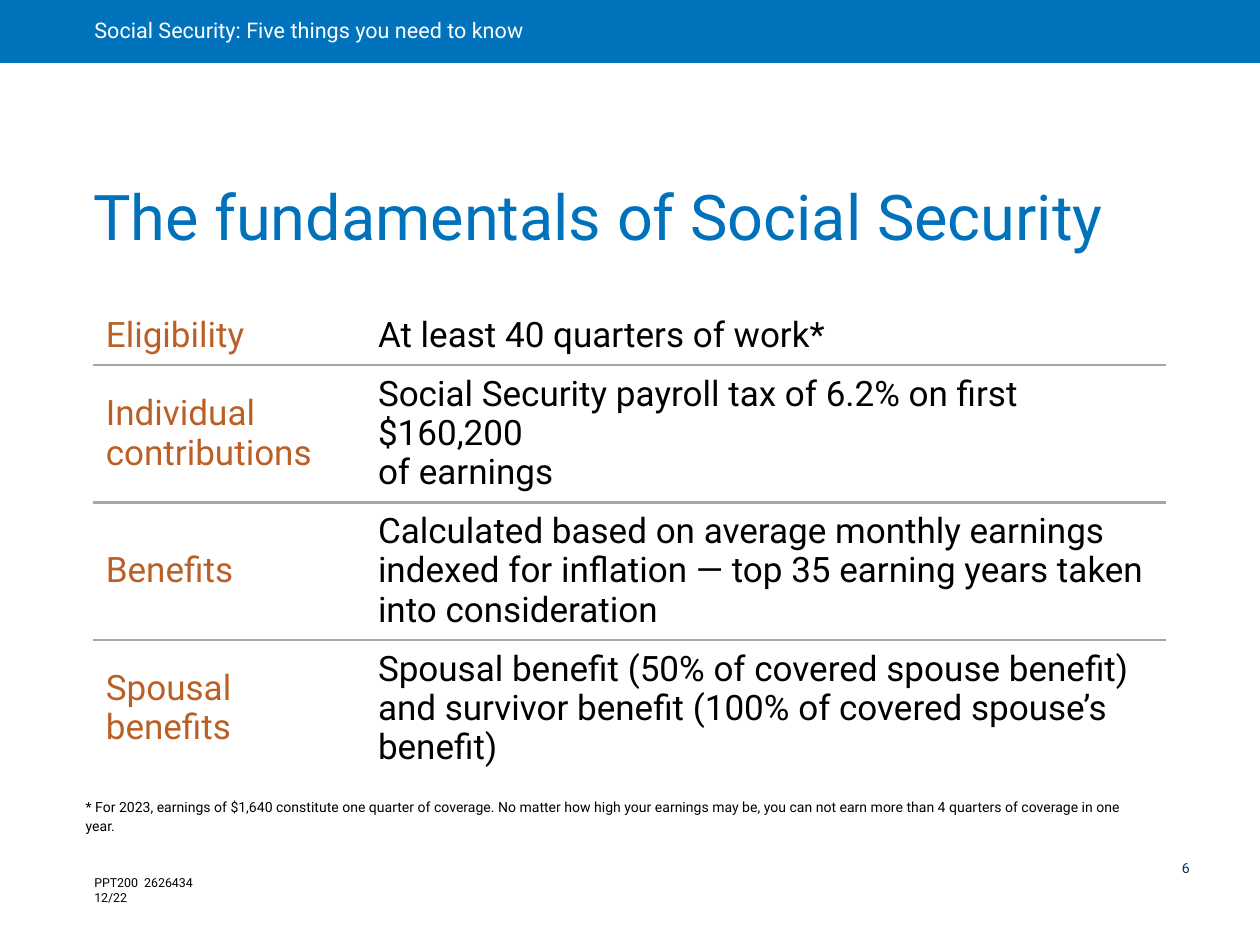
from lxml.etree import SubElement
from pptx import Presentation
from pptx.dml.color import RGBColor
from pptx.enum.shapes import MSO_SHAPE as Shape
from pptx.enum.text import MSO_ANCHOR as Anchor, PP_ALIGN as Align
from pptx.oxml.ns import qn
from pptx.util import Inches, Pt

BLUE, RUST, GRAY = "0072BC", "BA6027", "A6A6A6"


def tint(color, code):
    color.rgb = RGBColor.from_string(code)


def write(frame, text, size, code="000000", space=None):
    """Fill a text frame; a vertical tab in the text is a line break."""
    frame.word_wrap = True
    para = frame.paragraphs[0]
    para.text = text
    para.alignment = Align.LEFT
    para.line_spacing = space
    for run in para.runs:
        run.font.size = Pt(size)
        run.font.name = "Roboto"
        tint(run.font.color, code)


prs = Presentation()
prs.slide_width, prs.slide_height = Inches(10), Inches(7.5)
slide = prs.slides.add_slide(prs.slide_layouts[6])
shapes = slide.shapes

# Header band
band = shapes.add_shape(Shape.RECTANGLE, 0, 0, Inches(10), Inches(0.5))
band.shadow.inherit = False
band.fill.solid()
tint(band.fill.fore_color, "0073BC")
band.line.fill.background()
frame = band.text_frame
frame.margin_left, frame.margin_right = Inches(0.75), Inches(0.22)
frame.margin_top = frame.margin_bottom = 0
frame.vertical_anchor = Anchor.MIDDLE
write(frame, "Social Security: Five things you need to know", 12.3, "FFFFFF", 0.9)

# Title, footnote, document code and page number:
# place, insets (left, top, right, bottom), anchor, text, size, color, spacing
wide = (0.11, 0.06, 0.11, 0.06)
note = ("* For 2023, earnings of $1,640 constitute one quarter of coverage. "
        "No matter how high your earnings may be, you can not earn more than "
        "4 quarters of coverage in one year.")
boxes = [
    ((0.63, 1.78, 8.62, 0.3), wide, Anchor.BOTTOM,
     "The fundamentals of Social Security", 36, BLUE, 0.9),
    ((0.57, 6.46, 8.62, 0.22), wide, Anchor.BOTTOM, note, 8, "000000", 1.1),
    ((0.65, 6.9, 1.16, 0.34), (0.1, 0.05, 0.1, 0.05), Anchor.TOP,
     "PPT200  2626434 12/22", 7.1, "000000", None),
    ((9.25, 6.8, 0.5, 0.21), (0.13, 0.04, 0.04, 0.04), Anchor.TOP,
     "6", 8, "003463", 0.9),
]
for place, inset, anchor, text, size, code, space in boxes:
    frame = shapes.add_textbox(*map(Inches, place)).text_frame
    (frame.margin_left, frame.margin_top,
     frame.margin_right, frame.margin_bottom) = map(Inches, inset)
    frame.vertical_anchor = anchor
    write(frame, text, size, code, space)

# Table of fundamentals
rows = [
    ("Eligibility", "At least 40 quarters of work*"),
    ("Individual contributions",
     "Social Security payroll tax of 6.2% on first $160,200\vof earnings"),
    ("Benefits",
     "Calculated based on average monthly earnings indexed for inflation "
     "— top 35 earning years taken into consideration"),
    ("Spousal\vbenefits",
     "Spousal benefit (50% of covered spouse benefit) and survivor benefit "
     "(100% of covered spouse’s benefit)"),
]
last = len(rows) - 1
holder = shapes.add_table(len(rows), 2, Inches(0.74), Inches(2.44),
                          Inches(8.52), Inches(3.09))
table = holder.table
table.first_row = table.horz_banding = False
for col, width in zip(table.columns, (2.16, 6.35)):
    col.width = Inches(width)
for row, height in zip(table.rows, (0.31, 0.43, 0.43, 0.62)):
    row.height = Inches(height)
holder.height = Inches(3.09)

for i, texts in enumerate(rows):
    for j, (text, code) in enumerate(zip(texts, (RUST, "000000"))):
        cell = table.cell(i, j)
        cell.vertical_anchor = Anchor.MIDDLE
        cell.margin_left = cell.margin_right = Inches(0.1)
        cell.margin_top = cell.margin_bottom = Inches(0.07)
        write(cell.text_frame, text, 20, code, 0.95)
        props = cell._tc.get_or_add_tcPr()
        for side, shown in (("a:lnT", i > 0), ("a:lnB", i < last)):
            if shown:
                line = SubElement(props, qn(side), w=str(Pt(1.5)))
                fill = SubElement(line, qn("a:solidFill"))
                SubElement(fill, qn("a:srgbClr"), val=GRAY)
        cell.fill.background()

prs.save("out.pptx")
